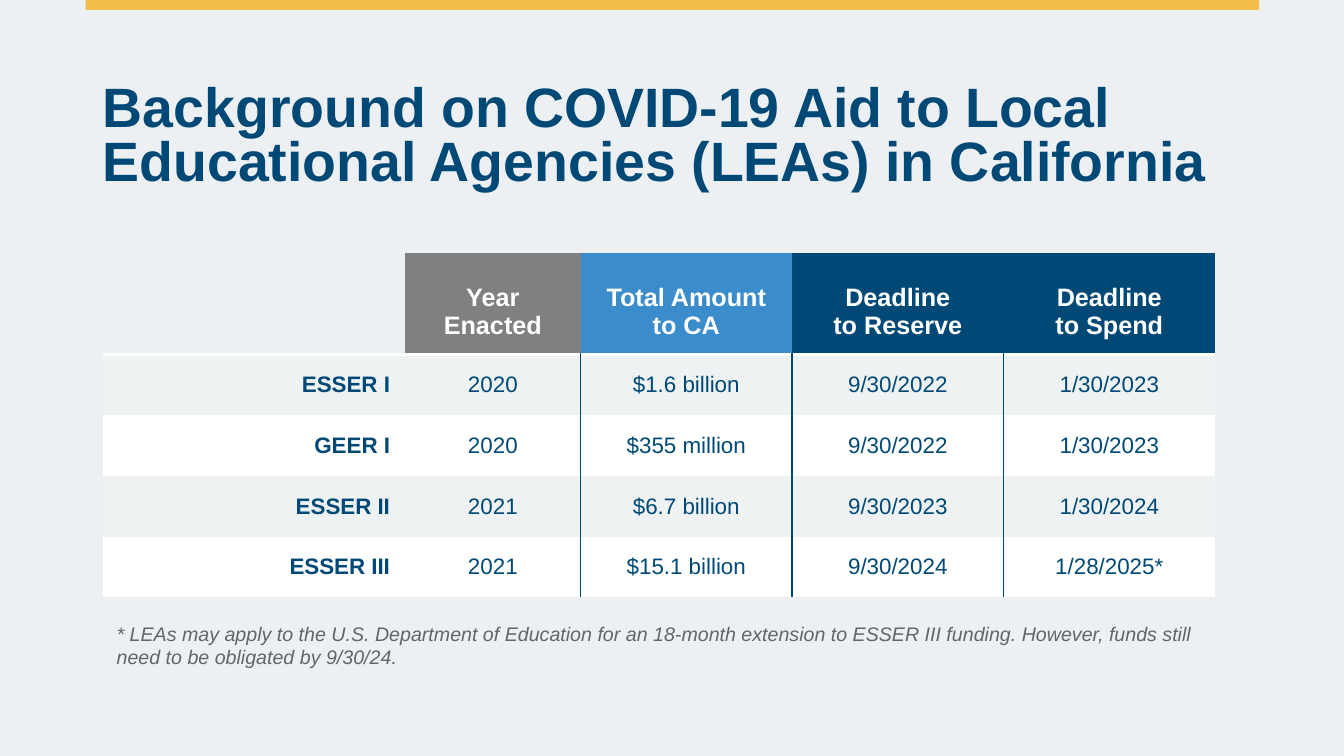
from lxml.etree import SubElement
from pptx import Presentation
from pptx.dml.color import RGBColor
from pptx.enum.shapes import MSO_SHAPE as Shape
from pptx.enum.text import MSO_ANCHOR as Anchor, MSO_AUTO_SIZE as AutoSize, PP_ALIGN as Align
from pptx.oxml.ns import qn
from pptx.util import Cm, Pt

TITLE = "Background on COVID-19 Aid to Local Educational Agencies (LEAs) in California"
HEADERS = [
    ("Year\nEnacted", "gray"),
    ("Total Amount\nto CA", "blue"),
    ("Deadline\nto Reserve", "navy"),
    ("Deadline\nto Spend", "navy"),
]
FUNDS = [
    ("ESSER I", "2020", "$1.6 billion", "9/30/2022", "1/30/2023"),
    ("GEER I", "2020", "$355 million", "9/30/2022", "1/30/2023"),
    ("ESSER II", "2021", "$6.7 billion", "9/30/2023", "1/30/2024"),
    ("ESSER III", "2021", "$15.1 billion", "9/30/2024", "1/28/2025*"),
]
FOOTNOTE = (
    "* LEAs may apply to the U.S. Department of Education for an 18-month extension "
    "to ESSER III funding. However, funds still need to be obligated by 9/30/24."
)
COLORS = {
    "background": "EDF0F2", "gold": "F1BE48", "navy": "004976", "blue": "3B8CCB",
    "gray": "808080", "white": "FFFFFF", "note": "626669",
}
COLUMN_WIDTHS = [7.62, 4.42, 5.33, 5.33, 5.33]
HEADER_HEIGHT, ROW_HEIGHT = 2.55, 1.53
CELL_INSET = 0.38
NO_STYLE = "{2D5ABB26-0587-4C30-8999-92F81FD0307C}"


def color(name):
    return RGBColor.from_string(COLORS[name])


def fill_solid(target, name):
    target.fill.solid()
    target.fill.fore_color.rgb = color(name)


def add_text(para, text, size, name, bold=False, italic=False):
    """Add one run per line of text, with line breaks between them."""
    for index, line in enumerate(text.split("\n")):
        if index:
            para.add_line_break()
        span = para.add_run()
        span.text = line
        font = span.font
        font.name, font.size = "Arial", Pt(size)
        font.bold, font.italic = bold, italic
        font.color.rgb = color(name)


def set_borders(cell, borders):
    """Draw the sides given as side: (colour, points, opacity); hide the others."""
    properties = cell._tc.get_or_add_tcPr()
    for side in "LRTB":
        line = SubElement(properties, qn(f"a:ln{side}"))
        if side not in borders:
            line.set("w", "0")
            SubElement(line, qn("a:noFill"))
            continue
        name, width, opacity = borders[side]
        line.set("w", str(Pt(width)))
        fill = SubElement(line, qn("a:solidFill"))
        add_opacity(SubElement(fill, qn("a:srgbClr"), val=COLORS[name]), opacity)


def add_opacity(color_element, percent):
    if percent < 100:
        SubElement(color_element, qn("a:alpha"), val=str(percent * 1000))


def format_cell(cell, top_inset, anchor):
    cell.margin_left = cell.margin_right = cell.margin_bottom = Cm(CELL_INSET)
    cell.margin_top = Cm(top_inset)
    cell.vertical_anchor = anchor


def add_title(page):
    title = page.shapes.title
    title.left, title.top, title.width, title.height = Cm(2.34), Cm(1.02), Cm(29.21), Cm(4.06)
    frame = title.text_frame
    frame.word_wrap, frame.auto_size = True, AutoSize.NONE
    frame.vertical_anchor = Anchor.BOTTOM
    frame.margin_left = frame.margin_right = frame.margin_bottom = Cm(0.25)
    frame.margin_top = 0
    para = frame.paragraphs[0]
    para.alignment, para.line_spacing = Align.LEFT, 0.8
    add_text(para, TITLE, 39.6, "navy", bold=True)


def add_fund_table(page):
    height = HEADER_HEIGHT + ROW_HEIGHT * len(FUNDS)
    graphic = page.shapes.add_table(
        len(FUNDS) + 1, len(COLUMN_WIDTHS),
        Cm(2.59), Cm(6.38), Cm(sum(COLUMN_WIDTHS)), Cm(height))
    table = graphic.table
    table.first_row = table.horz_banding = False
    table._tbl.tblPr.find(qn("a:tableStyleId")).text = NO_STYLE
    for column, width in zip(table.columns, COLUMN_WIDTHS):
        column.width = Cm(width)
    for index, row in enumerate(table.rows):
        row.height = Cm(ROW_HEIGHT if index else HEADER_HEIGHT)

    rule, divider = ("white", 3, 100), ("navy", 1, 50)
    set_borders(table.cell(0, 0), {"B": rule})
    for column, (text, fill) in enumerate(HEADERS, start=1):
        cell = table.cell(0, column)
        format_cell(cell, 2 * CELL_INSET, Anchor.BOTTOM)
        set_borders(cell, {"B": rule})
        fill_solid(cell, fill)
        para = cell.text_frame.paragraphs[0]
        para.alignment, para.line_spacing = Align.CENTER, Pt(20)
        add_text(para, text, 18, "white", bold=True)

    for row, fund in enumerate(FUNDS, start=1):
        for column, text in enumerate(fund):
            cell = table.cell(row, column)
            format_cell(cell, CELL_INSET, Anchor.MIDDLE)
            borders = {"T": rule} if row == 1 else {}
            if column > 1:
                borders["L"] = divider
            if 0 < column < len(fund) - 1:
                borders["R"] = divider
            set_borders(cell, borders)
            fill_solid(cell, "white")
            if row % 2:
                fill = cell._tc.tcPr.find(qn("a:solidFill"))
                add_opacity(fill.find(qn("a:srgbClr")), 15)
            para = cell.text_frame.paragraphs[0]
            para.alignment = Align.CENTER if column else Align.RIGHT
            add_text(para, text, 16, "navy", bold=column == 0)


def add_footnote(page):
    box = page.shapes.add_textbox(Cm(2.69), Cm(15.54), Cm(27.91), Cm(1.45))
    box.text_frame.word_wrap = True
    add_text(box.text_frame.paragraphs[0], FOOTNOTE, 14, "note", italic=True)


def main():
    deck = Presentation()
    deck.slide_width, deck.slide_height = Cm(33.87), Cm(19.05)
    page = deck.slides.add_slide(deck.slide_layouts[5])
    fill_solid(page.background, "background")

    band = page.shapes.add_shape(Shape.RECTANGLE, Cm(2.16), 0, Cm(29.57), Cm(0.25))
    band.shadow.inherit = False
    fill_solid(band, "gold")
    band.line.fill.background()

    add_title(page)
    add_fund_table(page)
    add_footnote(page)
    deck.save("out.pptx")


if __name__ == "__main__":
    main()
